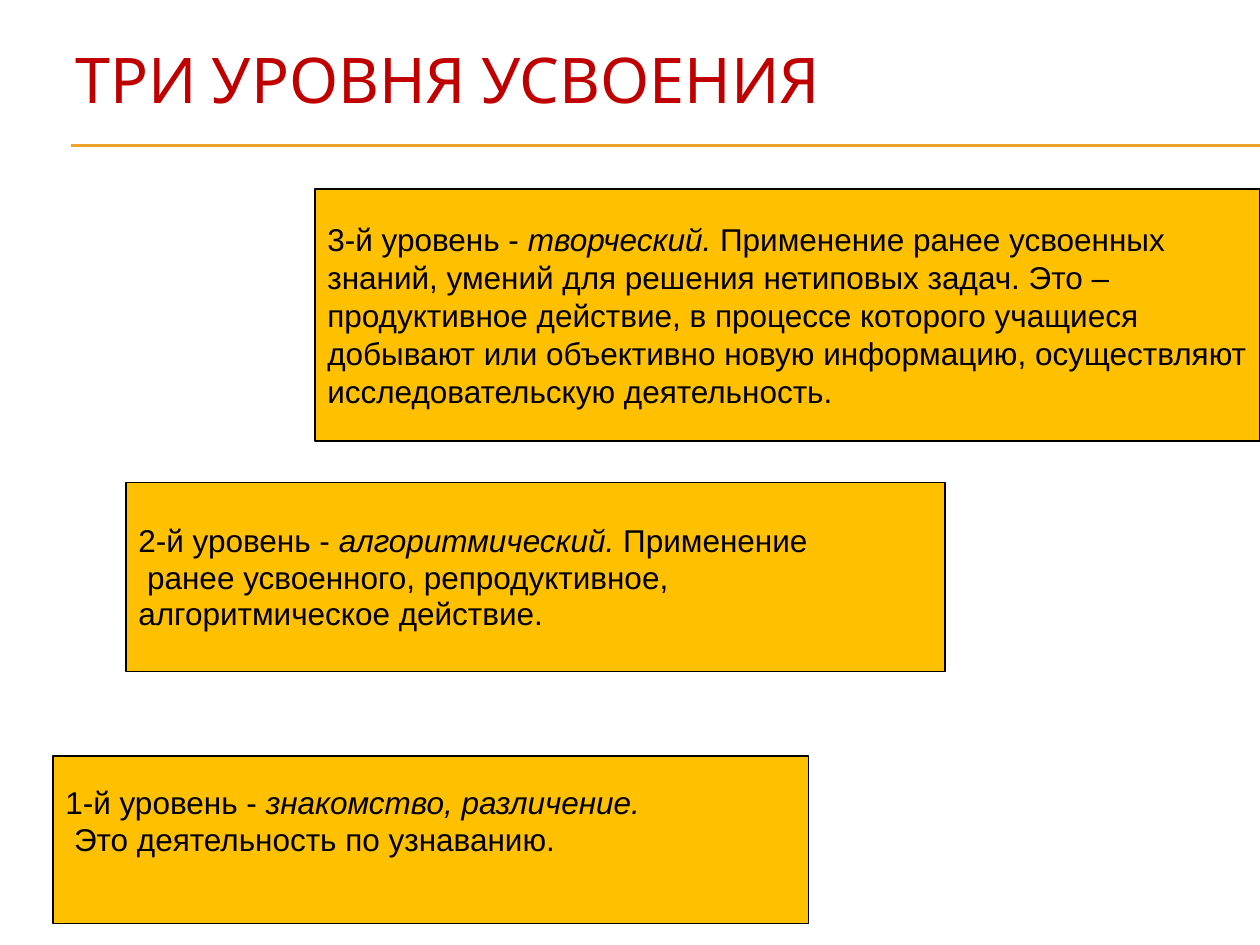
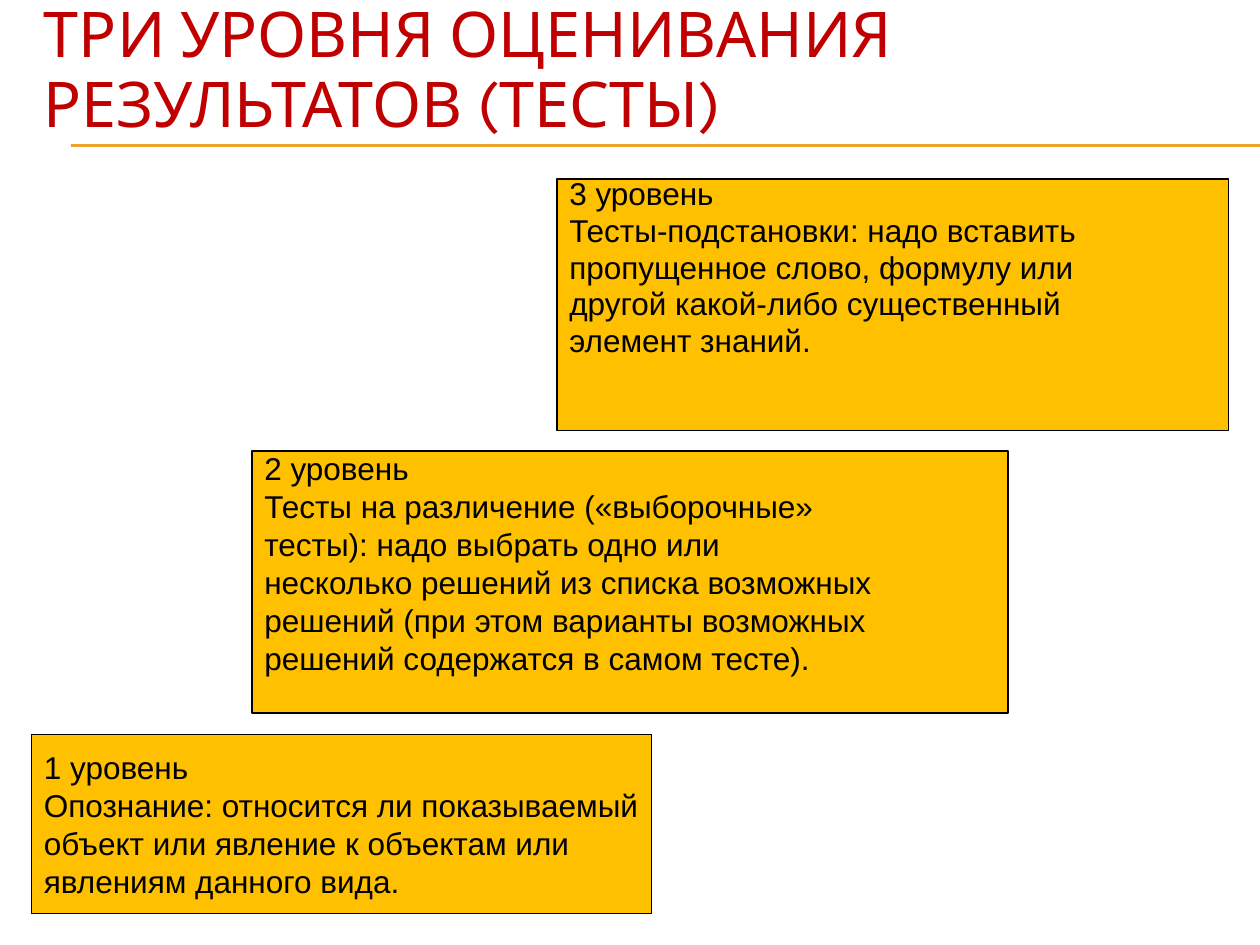
from lxml import etree
from pptx import Presentation
from pptx.dml.color import RGBColor
from pptx.enum.shapes import MSO_CONNECTOR, MSO_SHAPE
from pptx.enum.text import MSO_ANCHOR, PP_ALIGN
from pptx.oxml.ns import qn
from pptx.util import Inches, Pt

RED = RGBColor(0xC0, 0x00, 0x00)
AMBER = RGBColor(0xFF, 0xC0, 0x00)
ORANGE = RGBColor(0xF0, 0xA2, 0x2E)
BLACK = RGBColor(0x00, 0x00, 0x00)

TITLE_FONT, BODY_FONT = "Karla", "Arial"
NORMAL, TIGHT = Pt(21.7), Pt(21)
INSET = 0.05
BLANK_LINE = 0.3  # inches kept free below the text, per line

# Each level: box, line spacing, free lines below, paragraphs.
# A paragraph is a list of runs; a run is (text, italic).
LEARNING_LEVELS = [
    ((0.42, 6, 6, 1.33), TIGHT, 1, [
        [("1-й уровень - ", False), ("знакомство, различение.", True)],
        [(" Это деятельность по узнаванию.", False)],
    ]),
    ((1, 3.83, 6.5, 1.5), TIGHT, 0, [
        [("2-й уровень - ", False), ("алгоритмический. ", True), ("Применение", False)],
        [(" ранее усвоенного, репродуктивное,", False)],
        [("алгоритмическое действие.", False)],
    ]),
    ((2.5, 1.5, 7.5, 2), NORMAL, 0, [
        [("3-й уровень - ", False), ("творческий. ", True),
         ("Применение ранее усвоенных", False)],
        [("знаний, умений для решения нетиповых задач. Это –", False)],
        [("продуктивное действие, в процессе которого учащиеся", False)],
        [("добывают или объективно новую информацию, осуществляют", False)],
        [("исследовательскую деятельность.", False)],
    ]),
]

TEST_LEVELS = [
    ((0.25, 5.83, 4.92, 1.42), NORMAL, 0, [
        [("1 уровень", False)],
        [("Опознание: относится ли показываемый", False)],
        [("объект или явление к объектам или", False)],
        [("явлениям данного вида.", False)],
    ]),
    ((2, 3.58, 6, 2.08), NORMAL, 1, [
        [("2 уровень", False)],
        [("Тесты на различение («выборочные»", False)],
        [("тесты): надо выбрать одно или", False)],
        [("несколько решений из списка возможных", False)],
        [("решений (при этом варианты возможных", False)],
        [("решений содержатся в самом тесте).", False)],
    ]),
    ((4.42, 1.42, 5.33, 2), TIGHT, 2, [
        [("3 уровень", False)],
        [("Тесты-подстановки: надо вставить", False)],
        [("пропущенное слово, формулу или", False)],
        [("другой какой-либо существенный", False)],
        [("элемент знаний.", False)],
    ]),
]


def add_run(p, text, font, size, color, italic=False):
    r = p.add_run()
    r.text = text
    r.font.name = font
    r.font.size = Pt(size)
    r.font.color.rgb = color
    r.font.italic = italic


def add_title_rule(slide):
    """Draw the double line under the title."""
    for y in (1.15, 1.16):
        line = slide.shapes.add_connector(
            MSO_CONNECTOR.STRAIGHT, Inches(0.56), Inches(y), Inches(10), Inches(y))
        line.line.color.rgb = ORANGE
        line.line.width = Pt(0.75)
        etree.SubElement(line._element.spPr, qn("a:effectLst"))


def add_title(slide, text, box, spacing):
    tf = slide.shapes.add_textbox(*map(Inches, box)).text_frame
    tf.word_wrap = True
    tf.vertical_anchor = MSO_ANCHOR.MIDDLE
    tf.margin_top = tf.margin_bottom = 0
    p = tf.paragraphs[0]
    p.line_spacing = spacing
    add_run(p, text, TITLE_FONT, 36, RED)


def add_level(slide, box, spacing, free_lines, paragraphs):
    sp = slide.shapes.add_shape(MSO_SHAPE.RECTANGLE, *map(Inches, box))
    sp.shadow.inherit = False
    sp.fill.solid()
    sp.fill.fore_color.rgb = AMBER
    sp.line.color.rgb = BLACK
    sp.line.width = Pt(0.75)
    tf = sp.text_frame
    tf.word_wrap = False
    tf.vertical_anchor = MSO_ANCHOR.MIDDLE
    tf.margin_bottom = Inches(INSET + free_lines * BLANK_LINE)
    for i, runs in enumerate(paragraphs):
        p = tf.add_paragraph() if i else tf.paragraphs[0]
        p.alignment = PP_ALIGN.LEFT
        p.line_spacing = spacing
        for text, italic in runs:
            add_run(p, text, BODY_FONT, 18, BLACK, italic)


def add_levels_slide(prs, title, title_box, spacing, levels):
    slide = prs.slides.add_slide(prs.slide_layouts[6])
    add_title_rule(slide)
    add_title(slide, title, title_box, spacing)
    for level in levels:
        add_level(slide, *level)


def main():
    prs = Presentation()
    prs.slide_width, prs.slide_height = Inches(10), Inches(7.5)
    add_levels_slide(prs, "ТРИ УРОВНЯ УСВОЕНИЯ",
                     (0.5, 0, 9, 1.25), 1.0, LEARNING_LEVELS)
    # Two lines: the box ends above the rule, so the spacing is tighter.
    add_levels_slide(prs, "ТРИ УРОВНЯ ОЦЕНИВАНИЯ РЕЗУЛЬТАТОВ (ТЕСТЫ)",
                     (0.25, 0, 9, 1.12), Pt(40), TEST_LEVELS)
    prs.save("out.pptx")


if __name__ == "__main__":
    main()
